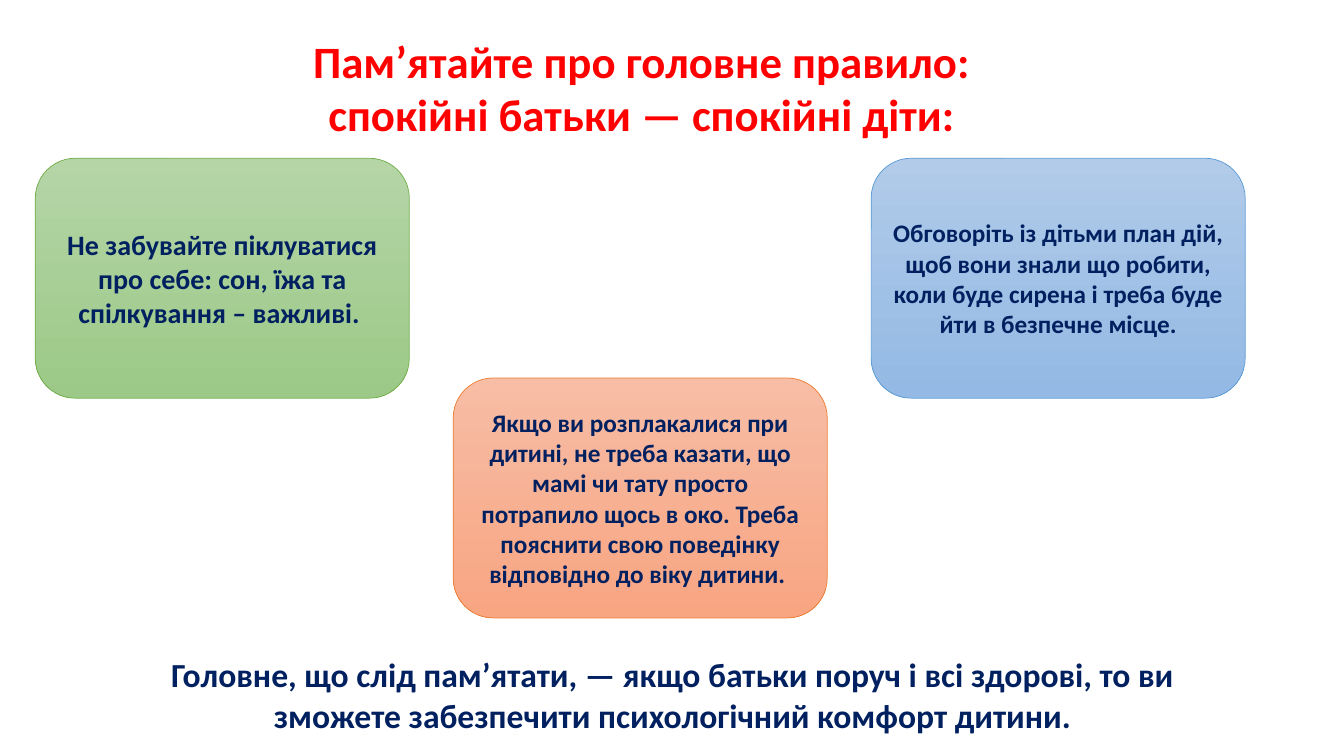
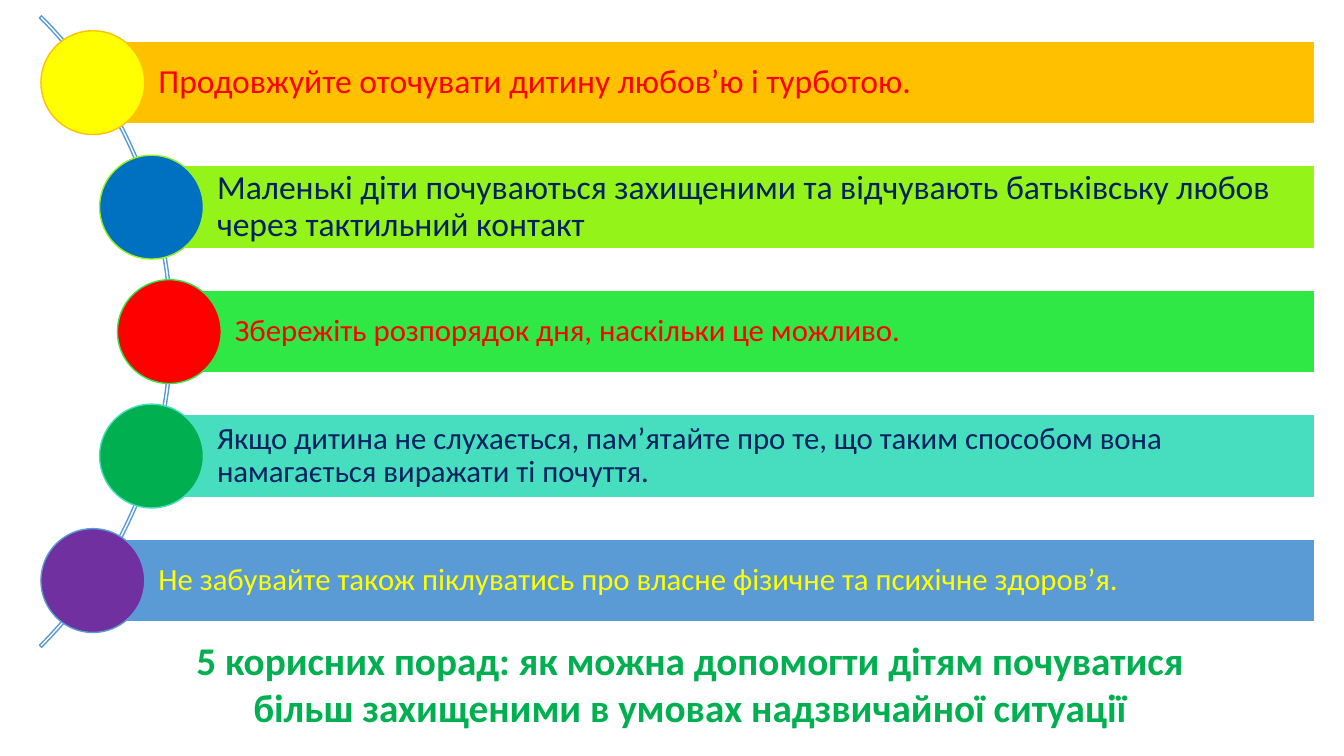
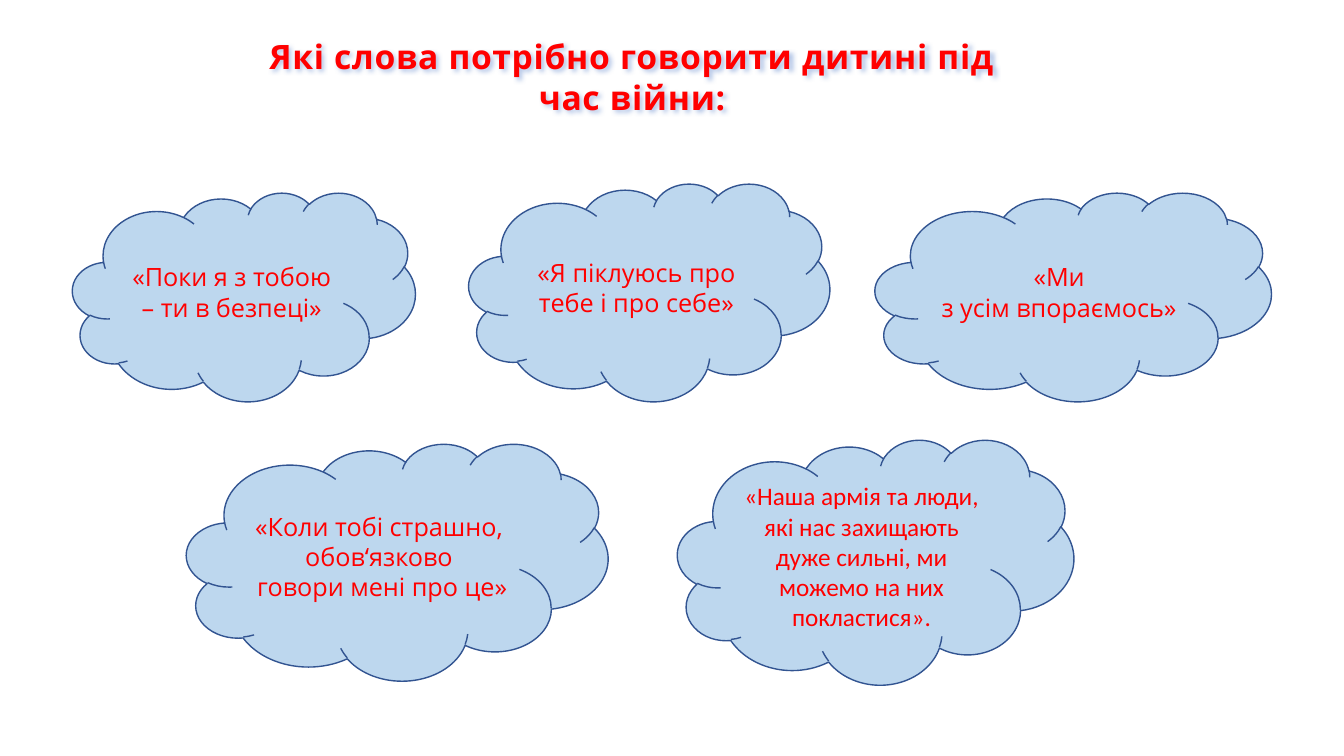
"""Build three slides of advice for parents on keeping children calm."""
import math
from dataclasses import dataclass

from pptx import Presentation, oxml
from pptx import util as u
from pptx.dml import color
from pptx.enum import shapes, text
from pptx.oxml import ns

RED = color.RGBColor(0xFF, 0x00, 0x00)
NAVY = color.RGBColor(0x00, 0x20, 0x60)
GREEN = color.RGBColor(0x00, 0xB0, 0x50)
YELLOW = color.RGBColor(0xFF, 0xFF, 0x00)
BLUE = color.RGBColor(0x00, 0x70, 0xC0)
PURPLE = color.RGBColor(0x70, 0x30, 0xA0)
WHITE = color.RGBColor(0xFF, 0xFF, 0xFF)
AMBER = color.RGBColor(0xFF, 0xC0, 0x00)
LIME = color.RGBColor(0x94, 0xF3, 0x19)
BRIGHT_GREEN = color.RGBColor(0x30, 0xE8, 0x45)
TURQUOISE = color.RGBColor(0x46, 0xDE, 0xBF)
SKY = color.RGBColor(0x5B, 0x9B, 0xD5)
LEAF = color.RGBColor(0x70, 0xAD, 0x47)
LEAF_LIGHT = color.RGBColor(0xB5, 0xD5, 0xA7)
LEAF_DEEP = color.RGBColor(0x9C, 0xC9, 0x87)
ORANGE = color.RGBColor(0xED, 0x7D, 0x31)
ORANGE_LIGHT = color.RGBColor(0xF7, 0xBD, 0xA5)
ORANGE_DEEP = color.RGBColor(0xF8, 0xA5, 0x82)
SKY_LIGHT = color.RGBColor(0xB1, 0xCB, 0xE9)
SKY_DEEP = color.RGBColor(0x93, 0xB9, 0xE4)
CLOUD_FILL = color.RGBColor(0xBD, 0xD7, 0xEE)
CLOUD_LINE = color.RGBColor(0x32, 0x54, 0x91)

CALIBRI = "Calibri"
OPEN_SANS = "Open Sans"
HARD_SPACE = chr(160)
CENTER = text.PP_ALIGN.CENTER
LEFT = text.PP_ALIGN.LEFT
TOP = text.MSO_ANCHOR.TOP
MIDDLE = text.MSO_ANCHOR.MIDDLE

CARD_FIRST, CARD_LAST = 0.35, 8.64
ARC_X, ARC_Y, ARC_RADIUS, ARC_OUTER = -2.72, 3.29, 4.4, 4.43
BAR_RIGHT, BAR_HEIGHT, BAR_SPAN = 13.04, 0.82, 4.94
DOT_SIZE = 1.03


@dataclass(frozen=True)
class Style:
    """Look of the text in one box."""

    size: float
    ink: color.RGBColor
    bold: bool = False
    face: str = CALIBRI
    align: text.PP_ALIGN = CENTER
    anchor: text.MSO_ANCHOR = MIDDLE
    leading: float = 1.0


@dataclass(frozen=True)
class Card:
    """Rounded card with a vertical gradient."""

    top: float
    light: color.RGBColor
    deep: color.RGBColor
    edge: color.RGBColor
    size: float
    words: str


@dataclass(frozen=True)
class Tip:
    """Bar with a dot on the arc."""

    bar: color.RGBColor
    dot: color.RGBColor
    ink: color.RGBColor
    size: float
    words: str


@dataclass(frozen=True)
class Cloud:
    """Cloud with something to say to a child; ~ marks a hard space."""

    left: float
    top: float
    width: float
    height: float
    lines: tuple[str, ...]
    face: str = OPEN_SANS


CARDS = (
    Card(1.57, LEAF_LIGHT, LEAF_DEEP, LEAF, 20,
         "Не забувайте піклуватися про себе: сон, їжа та спілкування – важливі. "),
    Card(3.75, ORANGE_LIGHT, ORANGE_DEEP, ORANGE, 18,
         "Якщо ви розплакалися при дитині, не треба казати, що мамі чи тату просто "
         "потрапило щось в око. Треба пояснити свою поведінку відповідно до віку дитини. "),
    Card(1.57, SKY_LIGHT, SKY_DEEP, SKY, 18,
         "Обговоріть із дітьми план дій, щоб вони знали що робити, коли буде сирена "
         "і треба буде йти в безпечне місце."),
)
TIPS = (
    Tip(AMBER, YELLOW, RED, 24, "Продовжуйте оточувати дитину любов’ю і турботою."),
    Tip(LIME, BLUE, NAVY, 24,
        "Маленькі діти почуваються захищеними та відчувають батьківську любов "
        "через тактильний контакт"),
    Tip(BRIGHT_GREEN, RED, RED, 22, "Збережіть розпорядок дня, наскільки це можливо."),
    Tip(TURQUOISE, GREEN, NAVY, 22,
        "Якщо дитина не слухається, пам’ятайте про те, що таким способом вона "
        "намагається виражати ті почуття."),
    Tip(SKY, PURPLE, YELLOW, 22,
        "Не забувайте також піклуватись про власне фізичне та психічне здоров’я."),
)
CLOUDS = (
    Cloud(0.72, 1.91, 3.4, 2.07, ("«Поки~я з тобою –~ти~в~безпеці»",)),
    Cloud(4.65, 1.82, 3.58, 2.16, ("«Я~піклуюсь~про тебе і про себе»",)),
    Cloud(8.68, 1.91, 3.93, 2.07, ("«Ми з~усім~впораємось»",)),
    Cloud(1.85, 4.4, 4.18, 2.35,
          ("«Коли~тобі~страшно,~обов‘язково~", "говори~мені~про~це»")),
    Cloud(6.72, 4.36, 3.93, 2.43,
          ("«Наша армія та люди, які нас захищають дуже сильні, "
           "ми можемо на них покластися».",), CALIBRI),
)


def write(box, style: Style, *lines: str) -> None:
    """Fill a box with one styled paragraph per line, turning ~ into a hard space."""
    frame = box.text_frame
    frame.word_wrap = True
    frame.auto_size = text.MSO_AUTO_SIZE.NONE
    frame.vertical_anchor = style.anchor
    for index, line in enumerate(lines):
        para = frame.add_paragraph() if index else frame.paragraphs[0]
        para.alignment = style.align
        para.line_spacing = style.leading
        span = para.add_run()
        span.text = line.replace("~", HARD_SPACE)
        span.font.name = style.face
        span.font.size = u.Pt(style.size)
        span.font.bold = style.bold
        span.font.color.rgb = style.ink


def add_page(deck, area: tuple[float, ...], style: Style, words: str):
    """Add a title-only page with its title placed in the given area."""
    page = deck.slides.add_slide(deck.slide_layouts[5])
    title = page.shapes.title
    title.left, title.top, title.width, title.height = map(u.Inches, area)
    write(title, style, words)
    return page


def add_box(page, kind, area: tuple[float, ...], fill, edge, weight: float = 1):
    """Add a preset shape; a list of two fills makes a downward gradient."""
    box = page.shapes.add_shape(kind, *map(u.Inches, area))
    box.shadow.inherit = False
    if isinstance(fill, list):
        box.fill.gradient()
        box.fill.gradient_angle = 270
        for stop, tint in zip(box.fill.gradient_stops, fill):
            stop.color.rgb = tint
    elif fill is None:
        box.fill.background()
    else:
        box.fill.solid()
        box.fill.fore_color.rgb = fill
    box.line.color.rgb = edge
    box.line.width = u.Pt(weight)
    return box


def add_arc(page) -> None:
    """Draw the thin double arc behind the dots."""
    size = 2 * ARC_OUTER
    arc = add_box(page, shapes.MSO_SHAPE.BLOCK_ARC,
                  (ARC_X - ARC_OUTER, ARC_Y - ARC_OUTER, size, size), None, SKY)
    for index, value in enumerate((189, 27, (ARC_OUTER - ARC_RADIUS) / size)):
        arc.adjustments[index] = value


def add_tip(page, index: int, tip: Tip) -> None:
    """Draw a bar and its dot, centred on the arc."""
    offset = (index / (len(TIPS) - 1) - 0.5) * BAR_SPAN
    x = ARC_X + math.sqrt(ARC_RADIUS ** 2 - offset ** 2)
    y = ARC_Y + offset
    bar = add_box(page, shapes.MSO_SHAPE.RECTANGLE,
                  (x, y - BAR_HEIGHT / 2, BAR_RIGHT - x, BAR_HEIGHT), tip.bar, WHITE)
    frame = bar.text_frame
    frame.margin_left = u.Inches(0.65)
    frame.margin_right = frame.margin_top = frame.margin_bottom = u.Inches(0.07)
    write(bar, Style(tip.size, tip.ink, align=LEFT, leading=0.9), tip.words)
    add_box(page, shapes.MSO_SHAPE.OVAL,
            (x - DOT_SIZE / 2, y - DOT_SIZE / 2, DOT_SIZE, DOT_SIZE), tip.dot, tip.bar)


def add_glow(title) -> None:
    """Widen the letter spacing of a title and give it a soft shadow."""
    for span in title.text_frame.paragraphs[0].runs:
        span.font._element.set("spc", "50")
    title.fill.background()
    title._element.spPr.append(oxml.parse_xml(
        f'<a:effectLst {ns.nsdecls("a")}><a:outerShdw blurRad="38100" dist="25400" '
        'dir="2700000"><a:srgbClr val="4472C4"><a:alpha val="40000"/></a:srgbClr>'
        '</a:outerShdw></a:effectLst>'))


def build_rule_page(deck) -> None:
    """Build the page on calm parents."""
    page = add_page(deck, (2.88, 0.28, 6.97, 1.18), Style(32, RED, True, anchor=TOP),
                    "Пам’ятайте про головне правило: спокійні батьки — спокійні діти:")
    step = (CARD_LAST - CARD_FIRST) / (len(CARDS) - 1)
    for index, card in enumerate(CARDS):
        box = add_box(page, shapes.MSO_SHAPE.ROUNDED_RECTANGLE,
                      (CARD_FIRST + step * index, card.top, 3.71, 2.38),
                      [card.light, card.deep], card.edge, 0.5)
        write(box, Style(card.size, NAVY, True), card.words)
    summary = page.shapes.add_textbox(*map(u.Inches, (1.03, 6.44, 11.28, 0.91)))
    write(summary, Style(24, NAVY, True, anchor=TOP),
          "Головне, що слід пам’ятати, — якщо батьки поруч і всі здорові, "
          "то ви зможете забезпечити психологічний комфорт дитини.")


def build_tips_page(deck) -> None:
    """Build the page with five tips."""
    page = add_page(deck, (1.71, 6.26, 10.26, 1.04), Style(28, GREEN, True, anchor=TOP),
                    "5 корисних порад: як можна допомогти дітям почуватися "
                    "більш захищеними в умовах надзвичайної ситуації")
    add_arc(page)
    for index, tip in enumerate(TIPS):
        add_tip(page, index, tip)


def build_words_page(deck) -> None:
    """Build the page with words for a child."""
    page = add_page(deck, (2.57, 0.31, 7.4, 1.31),
                    Style(24, RED, True, OPEN_SANS, anchor=TOP),
                    "Які~слова~потрібно~говорити~дитині~під час~війни:")
    add_glow(page.shapes.title)
    for cloud in CLOUDS:
        box = add_box(page, shapes.MSO_SHAPE.CLOUD,
                      (cloud.left, cloud.top, cloud.width, cloud.height),
                      CLOUD_FILL, CLOUD_LINE)
        write(box, Style(18, RED, face=cloud.face), *cloud.lines)


def main() -> None:
    """Build and save the deck."""
    deck = Presentation()
    deck.slide_width, deck.slide_height = u.Inches(13.33), u.Inches(7.5)
    build_rule_page(deck)
    build_tips_page(deck)
    build_words_page(deck)
    deck.save("out.pptx")


if __name__ == "__main__":
    main()
